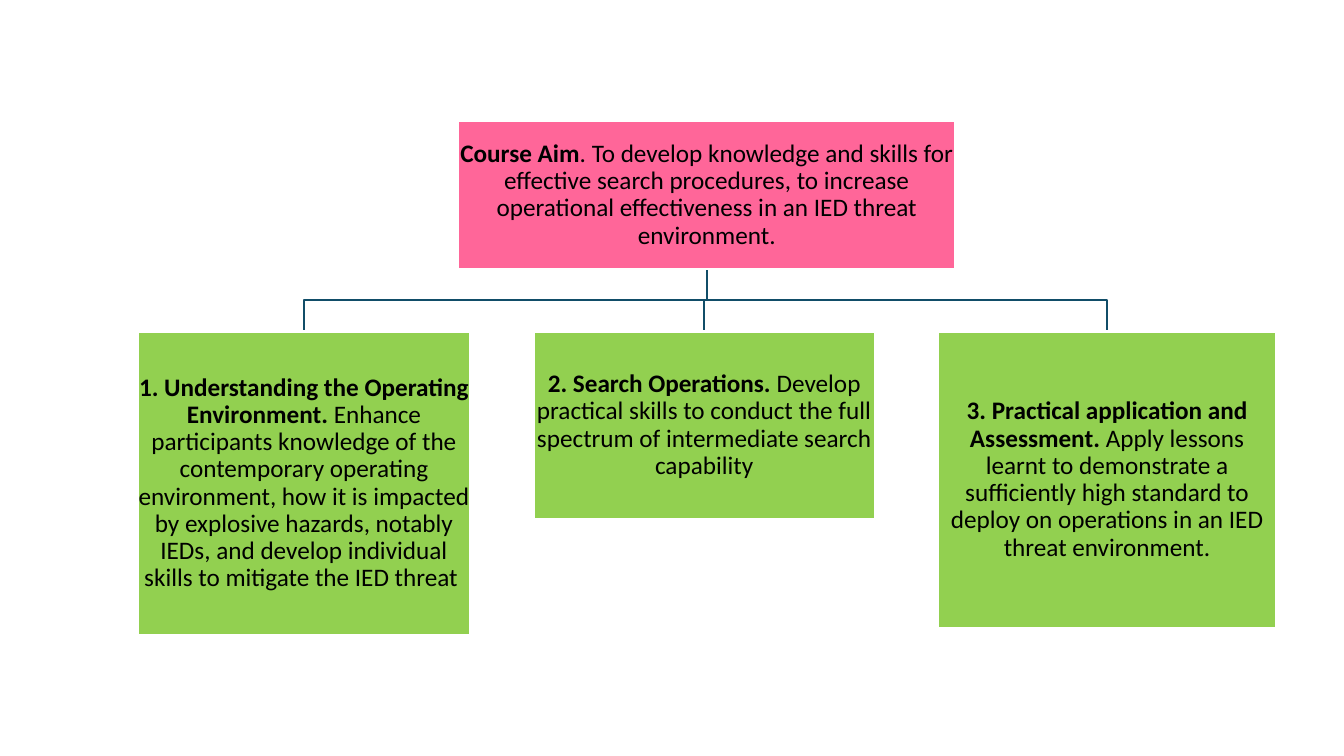
from pptx import Presentation
from pptx import util as u
from pptx.dml.color import RGBColor
from pptx.enum import shapes, text

COLORS = {"aim": "FF6699", "objective": "92D050", "link": "114D68",
          "edge": "FFFFFF", "ink": "000000"}
AIM = (34.06, 16, 37.06, 19.6)
AIM_TEXT = ("Course Aim", ". To develop knowledge and skills for effective search "
            "procedures, to increase operational effectiveness in an IED threat environment.")
ROW_TOP = 43.87
OBJECTIVES = [
    (10.2, 24.83, 40.13, "1. Understanding the Operating Environment. ",
     "Enhance participants knowledge of the contemporary operating environment, how it is "
     "impacted by explosive hazards, notably IEDs, and develop individual skills to mitigate "
     "the IED threat "),
    (39.68, 25.43, 24.8, "2. Search Operations. ",
     "Develop practical skills to conduct the full spectrum of intermediate search capability"),
    (69.77, 25.21, 39.2, "3. Practical application and Assessment. ",
     "Apply lessons learnt to demonstrate a sufficiently high standard to deploy on operations "
     "in an IED threat environment."),
]


class OrgChart:
    font, size = "Calibri", u.Pt(18)

    def __init__(self, prs):
        self.s = prs.slides.add_slide(prs.slide_layouts[6])
        self.col, self.row = prs.slide_width / 100, prs.slide_height / 100

    def color(self, name):
        return RGBColor.from_string(COLORS[name])

    def point(self, x, y):
        return round(x * self.col), round(y * self.row)

    def outline(self, sp, name, width):
        sp.shadow.inherit = False
        sp.line.color.rgb = self.color(name)
        sp.line.width = u.Pt(width)

    def link(self, parent, child):
        x0, y0 = parent[0] + parent[2] / 2, parent[1] + parent[3]
        x1, y1 = child[0] + child[2] / 2, child[1]
        mid = (y0 + y1) / 2
        fb = self.s.shapes.build_freeform(*self.point(x0, y0))
        fb.add_line_segments([self.point(x0, mid), self.point(x1, mid),
                              self.point(x1, y1)], close=False)
        sp = fb.convert_to_shape()
        sp.fill.background()
        self.outline(sp, "link", 1.5)

    def box(self, area, fill, heading, body):
        sp = self.s.shapes.add_shape(shapes.MSO_SHAPE.RECTANGLE,
                                     *self.point(*area[:2]), *self.point(*area[2:]))
        sp.fill.solid()
        sp.fill.fore_color.rgb = self.color(fill)
        self.outline(sp, "edge", 2)
        tf = sp.text_frame
        tf.word_wrap = True
        tf.vertical_anchor = text.MSO_ANCHOR.MIDDLE
        tf.margin_left = tf.margin_right = tf.margin_top = tf.margin_bottom = u.Inches(0.01)
        p = tf.paragraphs[0]
        p.alignment = text.PP_ALIGN.CENTER
        p.line_spacing = 0.9
        p.font.name, p.font.size = self.font, self.size
        p.font.color.rgb = self.color("ink")
        for words, bold in ((heading, True), (body, False)):
            r = p.add_run()
            r.text = words
            r.font.bold = bold


def main():
    prs = Presentation()
    prs.slide_width, prs.slide_height = u.Inches(13.33), u.Inches(7.5)
    chart = OrgChart(prs)
    areas = [(left, ROW_TOP, width, height) for left, width, height, *_ in OBJECTIVES]
    for area in reversed(areas):
        chart.link(AIM, area)
    chart.box(AIM, "aim", *AIM_TEXT)
    for area, (*_, heading, body) in zip(areas, OBJECTIVES):
        chart.box(area, "objective", heading, body)
    prs.save("out.pptx")


if __name__ == "__main__":
    main()
